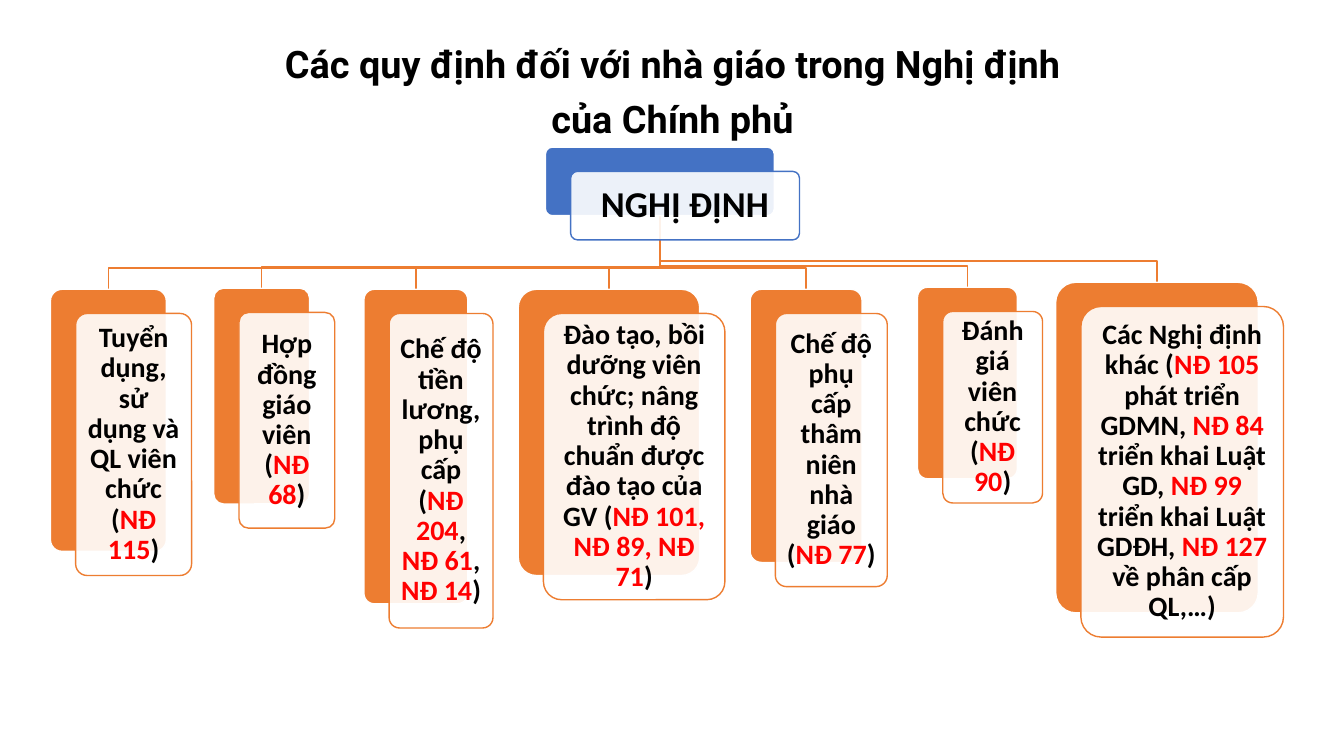
from lxml.etree import SubElement
from pptx import Presentation
from pptx.dml.color import RGBColor
from pptx.enum.shapes import MSO_SHAPE
from pptx.enum.text import MSO_ANCHOR, PP_ALIGN
from pptx.oxml.ns import qn
from pptx.util import Inches, Pt

COLORS = {"blue": "4472C4", "orange": "ED7D31", "white": "FFFFFF",
          "black": "000000", "red": "FF0000"}
RGB = {name: RGBColor.from_string(value) for name, value in COLORS.items()}

prs = Presentation()
prs.slide_width, prs.slide_height = Inches(13.33), Inches(7.5)
s = prs.slides.add_slide(prs.slide_layouts[6])
col = prs.slide_width / 13.33
row = prs.slide_height / 7.5


def add_text(sp, text, size, font, spacing, inset):
    tf = sp.text_frame
    tf.word_wrap = True
    tf.vertical_anchor = MSO_ANCHOR.MIDDLE
    tf.margin_left = tf.margin_right = tf.margin_top = tf.margin_bottom = Inches(inset)
    p = tf.paragraphs[0]
    p.alignment = PP_ALIGN.CENTER
    p.line_spacing = spacing
    for i, part in enumerate(text.split("|")):
        for j, line in enumerate(part.split("\n")):
            if j:
                p.add_line_break()
            r = p.add_run()
            r.text = line
            r.font.size, r.font.name, r.font.bold = Pt(size), font, True
            r.font.color.rgb = RGB["red" if i % 2 else "black"]


def add_card(x, y, w, h, color, text, size, inset):
    for dx, dy, fill, line in ((0, 0, color, "white"), (0.25, 0.24, "white", color)):
        sp = s.shapes.add_shape(MSO_SHAPE.ROUNDED_RECTANGLE, int((x + dx) * col),
                                int((y + dy) * row), int(w * col), int(h * row))
        sp.adjustments[0] = 0.1
        sp.shadow.inherit = False
        sp.fill.solid()
        sp.fill.fore_color.rgb = RGB[fill]
        sp.line.color.rgb = RGB[line]
        sp.line.width = Pt(1)
    clr = sp.fill._xPr.find(qn("a:solidFill"))[0]
    SubElement(clr, qn("a:alpha")).set("val", "90000")
    add_text(sp, text, size, "Calibri", 0.9, inset)


root_x, root_y, root_w, root_h = 5.41, 1.46, 2.27, 0.68
trunk_x, trunk_y = root_x + root_w / 2, root_y + root_h
drop = 0.21

decrees = [
    (0.5, 2.87, 1.15, 2.6, "Tuyển dụng, sử dụng và QL viên chức (|NĐ 115|)"),
    (2.12, 2.86, 0.95, 2.14, "Hợp đồng giáo viên (|NĐ 68|)"),
    (3.61, 2.87, 1.03, 3.12,
     "Chế độ tiền lương, phụ cấp (|NĐ 204|,| NĐ 61|,| NĐ 14|)"),
    (5.14, 2.87, 1.8, 2.84,
     "Đào tạo, bồi dưỡng viên chức; nâng trình độ chuẩn được đào tạo của GV ("
     "|NĐ 101, NĐ 89, NĐ 71|)"),
    (7.44, 2.87, 1.11, 2.71, "Chế độ phụ cấp thâm niên nhà giáo (|NĐ 77|) "),
    (9.1, 2.85, 0.99, 1.9, "Đánh giá viên chức (|NĐ 90|)"),
    (10.47, 2.8, 2.01, 3.28,
     "Các Nghị định khác (|NĐ 105 |phát triển GDMN, |NĐ 84 |triển khai Luật GD, "
     "|NĐ 99 |triển khai Luật GDĐH, |NĐ 127 |về phân cấp QL,…)"),
]

for x, y, w, h, text in reversed(decrees):
    mid = x + w / 2
    points = [(int(px * col), int(py * row)) for px, py in
              ((trunk_x, trunk_y), (trunk_x, y - drop), (mid, y - drop), (mid, y))]
    fb = s.shapes.build_freeform(*points[0])
    fb.add_line_segments(points[1:], close=False)
    sp = fb.convert_to_shape()
    sp.shadow.inherit = False
    sp.fill.background()
    sp.line.color.rgb = RGB["orange"]
    sp.line.width = Pt(1)

add_card(root_x, root_y, root_w, root_h, "blue", "NGHỊ ĐỊNH", 26, 0.11)
for x, y, w, h, text in decrees:
    add_card(x, y, w, h, "orange", text, 20, 0.08)

title = s.shapes.add_textbox(int(0.92 * col), int(0.34 * row),
                             int(11.5 * col), int(1.03 * row))
add_text(title, "Các quy định đối với nhà giáo trong Nghị định\ncủa Chính phủ",
         27, "Roboto", 1.2, 0.05)

prs.save("out.pptx")
